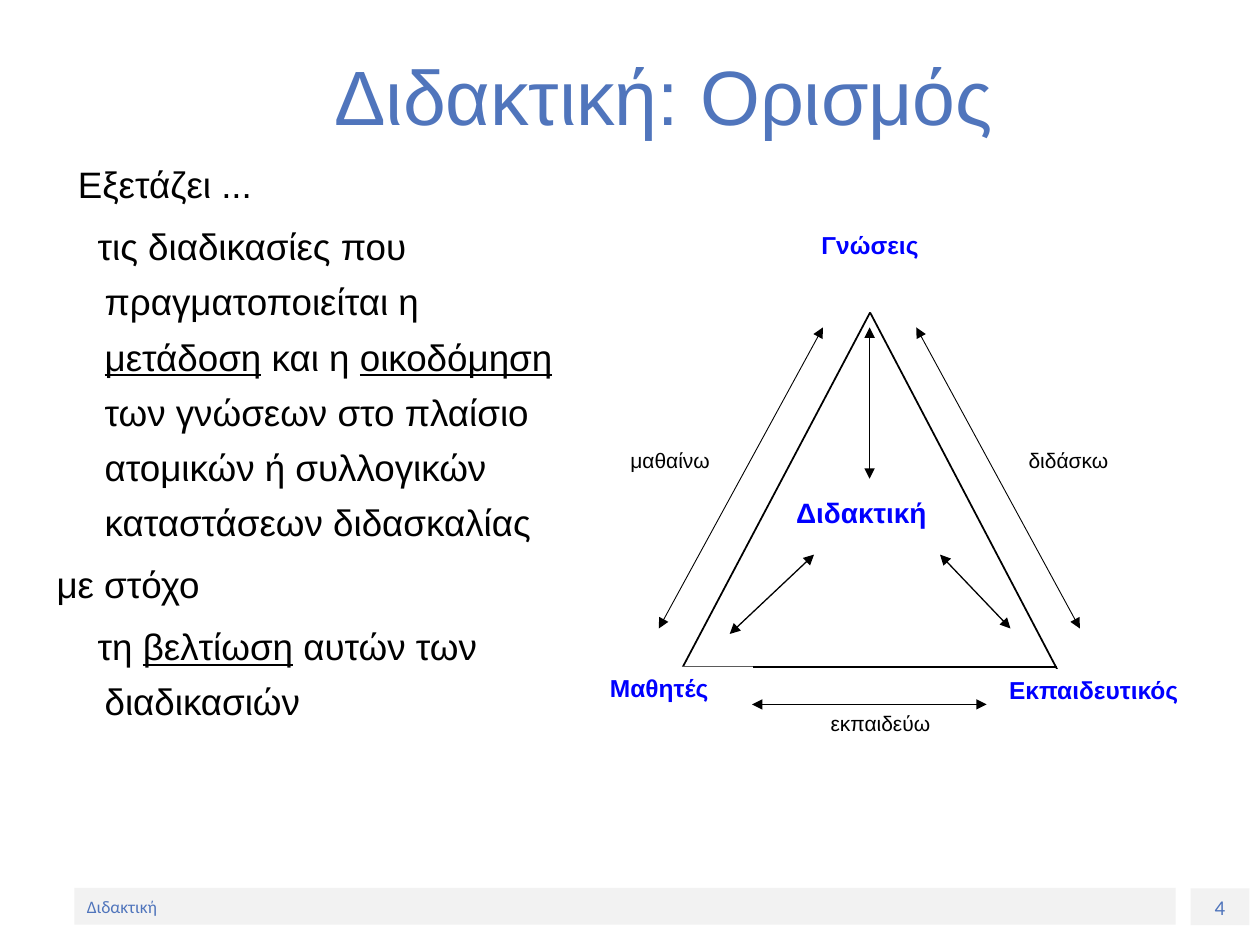
from dataclasses import dataclass

from lxml import etree
from pptx import Presentation
from pptx import util as u
from pptx.dml.color import RGBColor
from pptx.enum import shapes, text
from pptx.oxml import ns


@dataclass(frozen=True)
class Theme:
    accent: str = "5075BC"
    label: str = "0000FF"
    ink: str = "000000"
    paper: str = "FFFFFF"
    band: str = "F2F2F2"
    font: str = "Arial"
    footer_font: str = "Calibri"
    title_size: int = 44
    body_size: int = 21
    centre_size: int = 16
    corner_size: int = 14
    caption_size: int = 12
    footer_size: int = 10


class SlideBuilder:
    def __init__(self, slide, theme):
        self.slide = slide
        self.theme = theme

    def span(self, para, words, size, color, font=None, bold=False, underline=False):
        span = para.add_run()
        span.text = words
        span.font.size = u.Pt(size)
        span.font.name = font or self.theme.font
        span.font.color.rgb = RGBColor.from_string(color)
        span.font.bold = bold
        span.font.underline = underline

    def title(self, words, place):
        box = self.slide.shapes.title
        box.left, box.top, box.width, box.height = map(u.Cm, place)
        box.text_frame.vertical_anchor = text.MSO_ANCHOR.MIDDLE
        para = box.text_frame.paragraphs[0]
        para.alignment = text.PP_ALIGN.CENTER
        self.span(para, words, self.theme.title_size, self.theme.accent)

    def body(self, paragraphs, place):
        """Each paragraph is (left margin, first-line indent, [(words, underlined)])."""
        frame = self.slide.shapes.add_textbox(*map(u.Cm, place)).text_frame
        frame.word_wrap = True
        for number, (margin, indent, spans) in enumerate(paragraphs):
            para = frame.add_paragraph() if number else frame.paragraphs[0]
            para.line_spacing = 1.25
            para.space_before = u.Pt(4 if number else 0)
            properties = para._p.get_or_add_pPr()
            properties.set("marL", str(u.Cm(margin)))
            properties.set("indent", str(u.Cm(indent)))
            for words, underline in spans:
                self.span(para, words, self.theme.body_size, self.theme.ink,
                          underline=underline)

    def panel(self, words, place, size, color, fill, font=None, bold=False,
              align=text.PP_ALIGN.CENTER, anchor=text.MSO_ANCHOR.TOP):
        box = self.slide.shapes.add_shape(shapes.MSO_SHAPE.RECTANGLE, *map(u.Cm, place))
        box.shadow.inherit = False
        box.fill.solid()
        box.fill.fore_color.rgb = RGBColor.from_string(fill)
        box.line.fill.background()
        box.text_frame.vertical_anchor = anchor
        para = box.text_frame.paragraphs[0]
        para.alignment = align
        self.span(para, words, size, color, font, bold)
        return box

    def label(self, words, place, size):
        return self.panel(words, place, size, self.theme.label, self.theme.paper, bold=True)

    def footer(self, words, place, size, align):
        self.panel(words, place, size, self.theme.accent, self.theme.band,
                   self.theme.footer_font, align=align, anchor=text.MSO_ANCHOR.MIDDLE)

    def caption(self, words, left, top):
        box = self.slide.shapes.add_textbox(*map(u.Cm, (left, top, 3.3, 1.52)))
        box.text_frame.word_wrap = True
        para = box.text_frame.paragraphs[0]
        para.alignment = text.PP_ALIGN.CENTER
        self.span(para, words, self.theme.caption_size, self.theme.ink)

    def line(self, start, end, weight):
        line = self.slide.shapes.add_connector(
            shapes.MSO_CONNECTOR.STRAIGHT, *map(u.Cm, start + end))
        line.line.width = u.Pt(weight)
        line.line.color.rgb = RGBColor.from_string(self.theme.ink)
        etree.SubElement(line._element.spPr, ns.qn("a:effectLst"))
        return line

    def double_arrow(self, start, end, weight):
        outline = self.line(start, end, weight).line._get_or_add_ln()
        for tip in ("a:headEnd", "a:tailEnd"):
            etree.SubElement(outline, ns.qn(tip), type="triangle")


BODY = [
    (0.43, 0, [("Εξετάζει ...", False)]),
    (0.97, -0.14, [
        ("τις διαδικασίες που πραγματοποιείται η ", False),
        ("μετάδοση", True),
        (" και η ", False),
        ("οικοδόμηση", True),
        (" των γνώσεων στο πλαίσιο ατομικών ή συλλογικών καταστάσεων διδασκαλίας", False),
    ]),
    (0, 0, [("με στόχο", False)]),
    (0.97, -0.14, [
        ("τη ", False),
        ("βελτίωση", True),
        (" αυτών των διαδικασιών", False),
    ]),
]


def draw_triangle(page):
    theme = page.theme
    page.label("Διδακτική", (15.65, 9.86, 3.43, 1.73), theme.centre_size)
    knowledge = page.label("Γνώσεις", (15.65, 4.52, 3.78, 1.78), theme.corner_size)

    apex = (17.54, 6.3)
    page.line(apex, (13.74, 13.49), 1).begin_connect(knowledge, 2)
    page.line((13.77, 13.44), (21.31, 13.44), 1)
    page.line((21.31, 13.49), apex, 1).end_connect(knowledge, 2)

    for start, end in [((17.53, 9.65), (17.53, 6.6)),
                       ((18.95, 11.18), (20.37, 12.67)),
                       ((14.71, 12.78), (16.41, 11.18))]:
        page.double_arrow(start, end, 0.75)

    page.label("Μαθητές", (11.4, 13.44, 3.78, 1.83), theme.corner_size)
    page.label("Εκπαιδευτικός", (19.41, 13.49, 5.28, 1.83), theme.corner_size)

    page.caption("εκπαιδεύω", 16.1, 14.2)
    page.caption("διδάσκω", 19.89, 8.89)
    page.caption("μαθαίνω", 11.86, 8.89)

    for start, end in [((15.16, 14.2), (19.89, 14.2)),
                       ((13.28, 12.67), (16.59, 6.6)),
                       ((21.77, 12.67), (18.47, 6.6))]:
        page.double_arrow(start, end, 0.5)


def main():
    deck = Presentation()
    deck.slide_width, deck.slide_height = u.Cm(25.4), u.Cm(19.05)
    theme = Theme()
    page = SlideBuilder(deck.slides.add_slide(deck.slide_layouts[5]), theme)
    page.footer("4", (24, 17.91, 1.19, 0.74), theme.caption_size, text.PP_ALIGN.CENTER)
    page.footer("Διδακτική", (1.5, 17.9, 22.2, 0.74), theme.footer_size, text.PP_ALIGN.LEFT)
    page.title("Διδακτική: Ορισμός", (0.69, 0.71, 25.4, 2.41))
    page.body(BODY, (0.89, 2.92, 11, 14.6))
    draw_triangle(page)
    deck.save("out.pptx")


if __name__ == "__main__":
    main()
